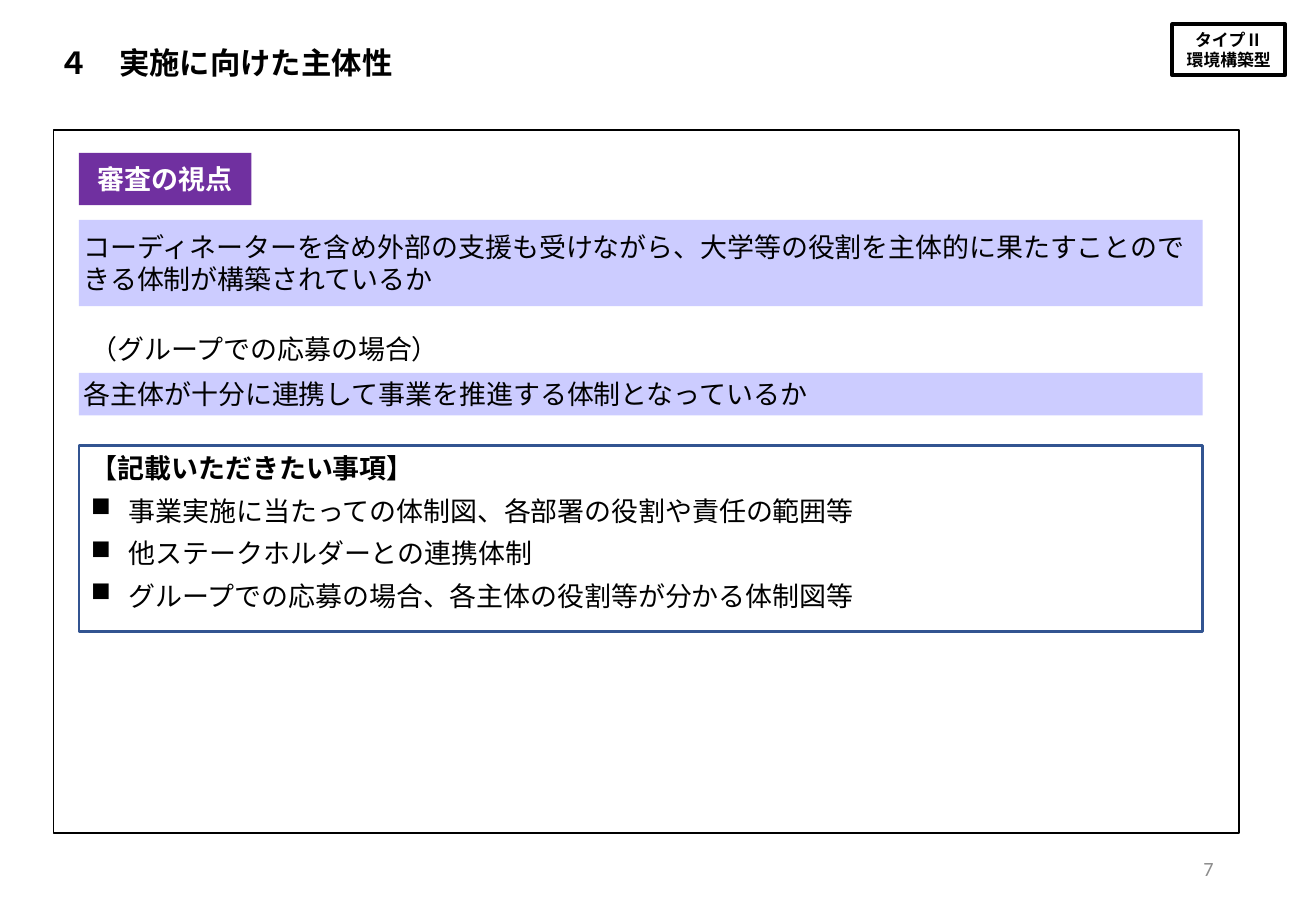
"""Build the slide on initiative in carrying out the project."""
from lxml.etree import SubElement
from pptx import Presentation
from pptx.dml.color import RGBColor
from pptx.enum.shapes import MSO_SHAPE
from pptx.enum.text import MSO_ANCHOR as ANCHOR, PP_ALIGN as ALIGN
from pptx.oxml.ns import qn
from pptx.util import Pt

BLACK = RGBColor(0x00, 0x00, 0x00)
WHITE = RGBColor(0xFF, 0xFF, 0xFF)
GRAY = RGBColor(0x8C, 0x8C, 0x8C)
PURPLE = RGBColor(0x70, 0x30, 0xA0)
LAVENDER = RGBColor(0xCC, 0xCC, 0xFF)
BLUE = RGBColor(0x32, 0x54, 0x91)
LEFT, WIDTH = 46.8, 666

deck = Presentation()
deck.slide_width, deck.slide_height = Pt(780), Pt(540)
slide = deck.slides.add_slide(deck.slide_layouts[6])


def add_panel(left, top, width, height, fill=None, line=None, weight=1):
    panel = slide.shapes.add_shape(
        MSO_SHAPE.RECTANGLE, Pt(left), Pt(top), Pt(width), Pt(height))
    panel.shadow.inherit = False
    if fill is None:
        panel.fill.background()
    else:
        panel.fill.solid()
        panel.fill.fore_color.rgb = fill
    if line is None:
        panel.line.fill.background()
    else:
        panel.line.color.rgb = line
        panel.line.width = Pt(weight)
    return panel


def write(box, lines, size, font="Arial", color=BLACK, bold=False,
          align=ALIGN.LEFT, anchor=ANCHOR.MIDDLE, inset=None):
    frame = box.text_frame
    frame.word_wrap = True
    frame.vertical_anchor = anchor
    if inset is not None:
        frame.margin_left = frame.margin_right = Pt(inset)
        frame.margin_top = frame.margin_bottom = Pt(inset)
    frame.text = "\n".join(lines)
    for para in frame.paragraphs:
        para.alignment = align
        para.font.name, para.font.size = font, Pt(size)
        para.font.bold, para.font.color.rgb = bold, color
    return frame.paragraphs


badge = add_panel(694.8, 14.4, 67, 30.2, line=BLACK, weight=2.25)
write(badge, ["タイプⅡ", "環境構築型"], 10, bold=True, align=ALIGN.CENTER, inset=2.9)

title = slide.shapes.add_textbox(Pt(31.7), Pt(23), Pt(291.6), Pt(27.4))
write(title, ["４　実施に向けた主体性"], 18, "Calibri", bold=True, inset=2.9)

add_panel(31.7, 77, 702.7, 416.9, WHITE, BLACK)

criteria = [
    (130.3, 51.1, "コーディネーターを含め外部の支援も受けながら、大学等の役割を主体的に果たすことのできる体制が構築されているか"),
    (221, 25.2, "各主体が十分に連携して事業を推進する体制となっているか"),
]
for top, height, text in criteria:
    write(add_panel(LEFT, top, WIDTH, height, LAVENDER), [text], 16, inset=2.9)

heading = add_panel(LEFT, 90.7, 102.2, 31, PURPLE)
write(heading, ["審査の視点"], 16, color=WHITE, bold=True, align=ALIGN.CENTER, inset=2.9)

group_note = slide.shapes.add_textbox(Pt(LEFT), Pt(193.7), Pt(270.7), Pt(26.6))
write(group_note, ["（グループでの応募の場合）"], 16, "Calibri", anchor=ANCHOR.TOP)

page_number = slide.shapes.add_textbox(Pt(550.8), Pt(500.4), Pt(175.7), Pt(28.8))
write(page_number, ["7"], 12, "Calibri", GRAY, align=ALIGN.RIGHT)

requests = add_panel(LEFT, 264.2, WIDTH, 110.2, WHITE, BLUE, 1.5)
request_paras = write(requests, [
    "【記載いただきたい事項】",
    "事業実施に当たっての体制図、各部署の役割や責任の範囲等",
    "他ステークホルダーとの連携体制",
    "グループでの応募の場合、各主体の役割等が分かる体制図等",
], 16, anchor=ANCHOR.TOP)
request_paras[0].font.bold = True
for para in request_paras:
    para.space_before = Pt(6)
for para in request_paras[1:]:
    properties = para._p.get_or_add_pPr()
    properties.set("marL", str(Pt(22.5)))
    properties.set("indent", str(-Pt(22.5)))
    bullet = SubElement(properties, qn("a:buChar"), char="■")
    properties.find(qn("a:defRPr")).addprevious(bullet)

deck.save("out.pptx")
